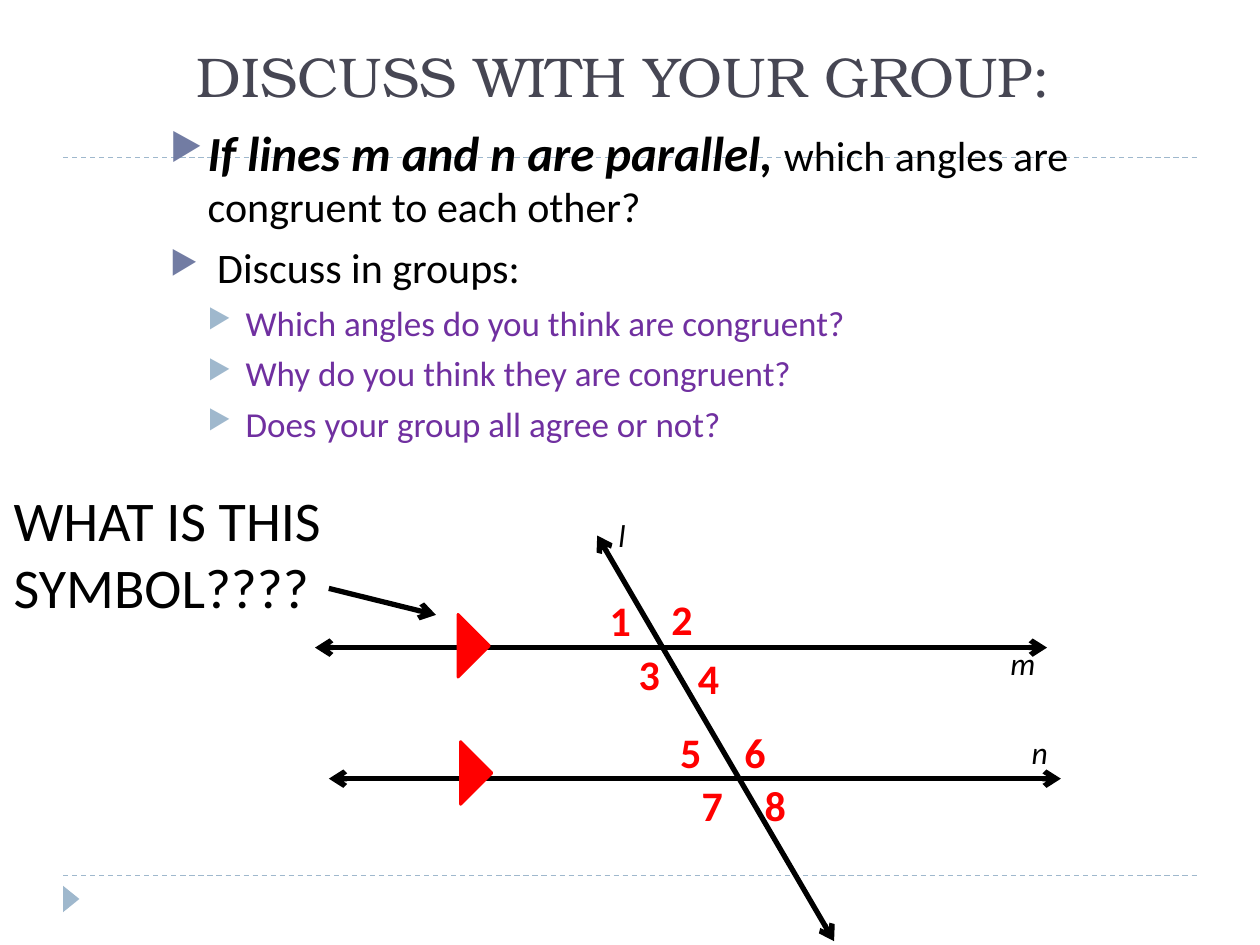
"""Build the discussion slide on angles formed by parallel lines m and n."""
from dataclasses import dataclass

from lxml import etree
from pptx import Presentation
from pptx.dml.color import RGBColor
from pptx.enum import dml, shapes, text
from pptx.oxml import ns
from pptx.util import Inches, Pt


@dataclass(frozen=True)
class Theme:
    title_font: str = "TeX Gyre Bonum"
    body_font: str = "Calibri"
    title: str = "464653"
    ink: str = "000000"
    accent: str = "FF0000"
    question: str = "7030A0"
    bullet: str = "727CA3"
    soft: str = "9FB8CD"
    heading_size: int = 32
    lead_size: int = 28
    body_size: int = 24
    question_size: int = 20
    name_size: int = 18


THEME = Theme()


def rgb(color):
    return RGBColor.from_string(color)


def style_run(run, size, color=THEME.ink, font=THEME.body_font, bold=False, italic=False):
    run.font.size = Pt(size)
    run.font.name = font
    run.font.bold = bold
    run.font.italic = italic
    run.font.color.rgb = rgb(color)


def add_frame(slide, left, top, width, height):
    box = slide.shapes.add_textbox(Inches(left), Inches(top), Inches(width), Inches(height))
    box.text_frame.word_wrap = True
    return box.text_frame


def add_label(slide, wording, left, top, width, height, size, **style):
    frame = add_frame(slide, left, top, width, height)
    frame.text = wording
    style_run(frame.paragraphs[0].runs[0], size, **style)
    return frame


def add_line(slide, start, end, color=THEME.ink, width=3, arrows=(), dashed=False):
    line = slide.shapes.add_connector(
        shapes.MSO_CONNECTOR.STRAIGHT, *(Inches(value) for value in (*start, *end)))
    line.line.color.rgb = rgb(color)
    line.line.width = Pt(width)
    if dashed:
        line.line.dash_style = dml.MSO_LINE.DASH
    outline = line.line._get_or_add_ln()
    for arrow in arrows:
        etree.SubElement(outline, ns.qn(f"a:{arrow}"), type="arrow")
    etree.SubElement(line._element.spPr, ns.qn("a:effectLst"))


def add_marker(slide, left, top, width, height, color, outline=None):
    marker = slide.shapes.add_shape(
        shapes.MSO_SHAPE.ISOSCELES_TRIANGLE,
        Inches(left), Inches(top), Inches(width), Inches(height))
    marker.rotation = 90
    marker.shadow.inherit = False
    marker.fill.solid()
    marker.fill.fore_color.rgb = rgb(color)
    if outline:
        marker.line.color.rgb = rgb(color)
        marker.line.width = Pt(outline)
    else:
        marker.line.fill.background()


def set_bullet(paragraph, level, color):
    properties = paragraph._p.get_or_add_pPr()
    properties.set("marL", str(Inches(0.3 * (level + 1))))
    properties.set("indent", str(Inches(-0.3)))
    bullet_color = etree.SubElement(properties, ns.qn("a:buClr"))
    etree.SubElement(bullet_color, ns.qn("a:srgbClr"), val=color)
    etree.SubElement(properties, ns.qn("a:buSzPct"), val="76000")
    etree.SubElement(properties, ns.qn("a:buChar"), char="▶")


def add_prompts(slide):
    lead = dict(size=THEME.lead_size, bold=True, italic=True)
    body = dict(size=THEME.body_size)
    question = dict(size=THEME.question_size, color=THEME.question)
    prompts = [
        (0, [("If lines m and n are parallel, ", lead),
             ("which angles are congruent to each other?", body)]),
        (0, [(" Discuss in groups:", body)]),
        (1, [("Which angles do you think are congruent?", question)]),
        (1, [("Why do you think they are congruent?", question)]),
        (1, [("Does your group all agree or not?", question)]),
    ]
    frame = add_frame(slide, 1.25, 0.92, 8.52, 5.92)
    for index, (level, pieces) in enumerate(prompts):
        paragraph = frame.add_paragraph() if index else frame.paragraphs[0]
        paragraph.level = level
        paragraph.space_before = Pt(6 - level)
        set_bullet(paragraph, level, THEME.soft if level else THEME.bullet)
        for wording, style in pieces:
            run = paragraph.add_run()
            run.text = wording
            style_run(run, **style)


def add_diagram(slide):
    both_ends = ("headEnd", "tailEnd")
    for start, end in [((2.5, 5.14), (8.31, 5.14)),
                       ((6.62, 7.47), (4.74, 4.25)),
                       ((2.61, 6.18), (8.42, 6.18))]:
        add_line(slide, start, end, arrows=both_ends)
    for name, left, top in [("m", 7.92, 5.06), ("n", 8.09, 5.77), ("l", 4.81, 4.05)]:
        add_label(slide, name, left, top, 0.67, 0.4, THEME.name_size, italic=True)
    angle_places = [(4.74, 4.67), (5.23, 4.66), (4.97, 5.1), (5.44, 5.13),
                    (5.3, 5.72), (5.81, 5.72), (5.47, 6.14), (5.97, 6.14)]
    for number, (left, top) in enumerate(angle_places, start=1):
        add_label(slide, str(number), left, top, 0.67, 0.5, THEME.body_size,
                  color=THEME.accent, bold=True)
    for left, top in [(3.51, 5), (3.53, 6.01)]:
        add_marker(slide, left, top, 0.5, 0.25, THEME.accent, outline=1.5)


def main():
    deck = Presentation()
    deck.slide_width, deck.slide_height = Inches(10), Inches(7.5)
    slide = deck.slides.add_slide(deck.slide_layouts[6])
    for height in (6.95, 1.25):
        add_line(slide, (0.5, height), (9.5, height), THEME.soft, 0.75, dashed=True)
    add_marker(slide, 0.46, 7.07, 0.21, 0.13, THEME.soft)
    title = add_label(slide, "DISCUSS WITH YOUR GROUP:", 1.46, -0.04, 8.2, 0.95,
                      THEME.heading_size, color=THEME.title, font=THEME.title_font)
    title.vertical_anchor = text.MSO_ANCHOR.BOTTOM
    add_prompts(slide)
    add_diagram(slide)
    add_label(slide, "WHAT IS THIS SYMBOL????", 0.01, 3.8, 3.25, 1.18, THEME.heading_size)
    add_line(slide, (2.61, 4.67), (3.46, 4.88), arrows=("tailEnd",))
    deck.save("out.pptx")


if __name__ == "__main__":
    main()
